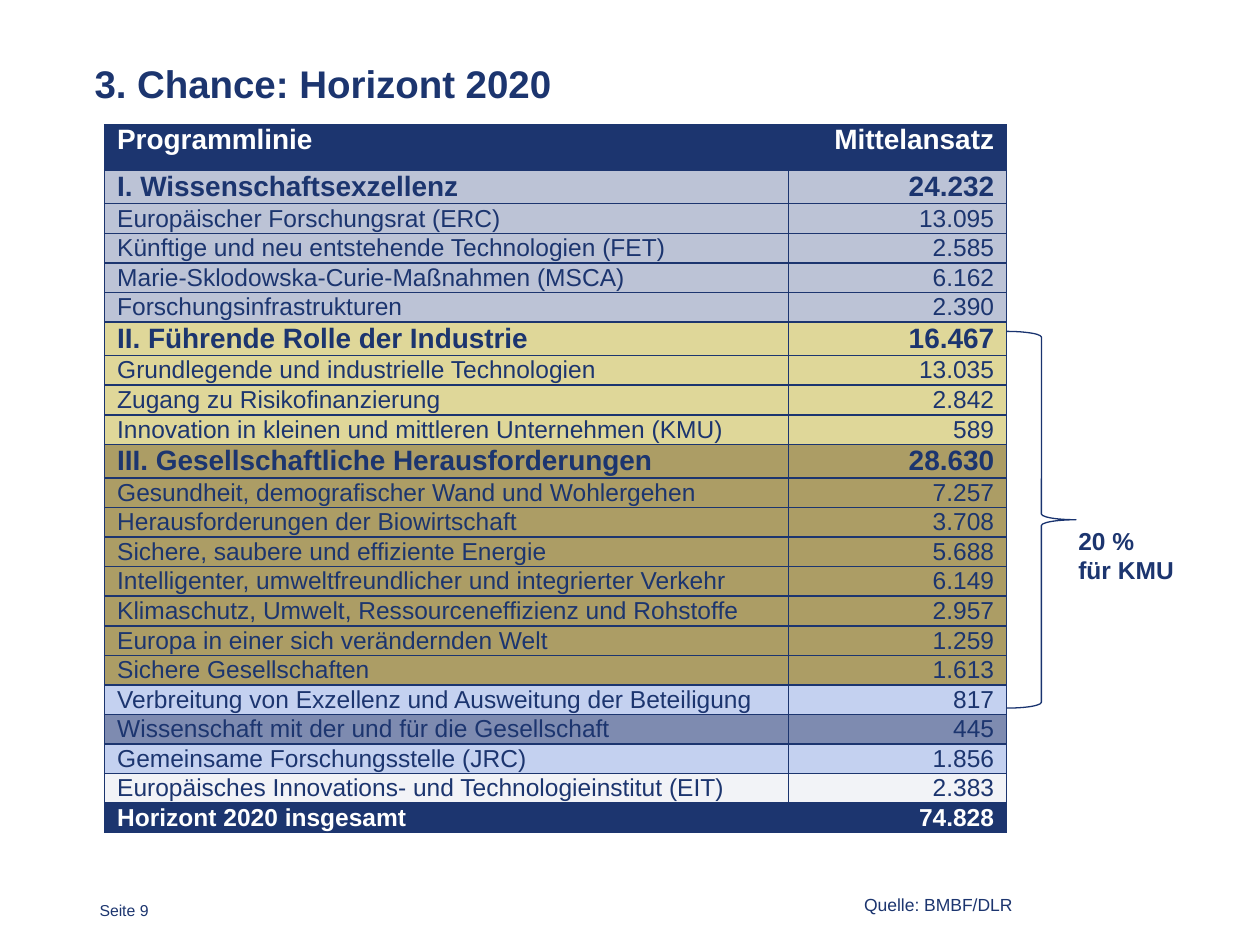
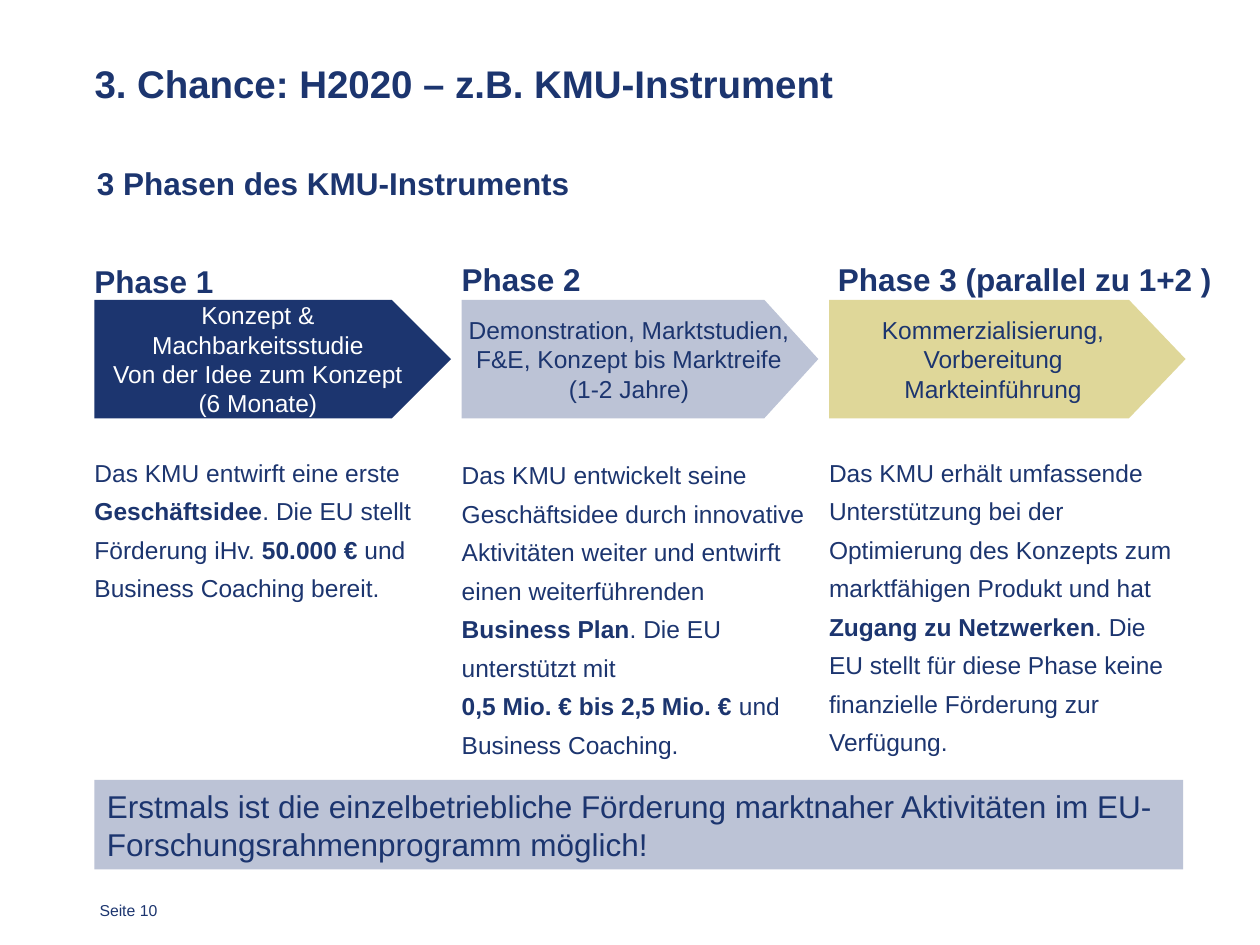
from lxml import etree
from pptx import Presentation, util as u
from pptx.dml.color import RGBColor
from pptx.enum import shapes, text
from pptx.oxml.ns import qn

FONT = "Arial"
C = {"navy": "1C356F", "brace": "19336F", "mist": "BCC3D6", "sand": "DFD799",
     "olive": "AC9D65", "sky": "C4D1F0", "slate": "7E8BB0", "pale": "F2F3F7",
     "white": "FFFFFF"}
TOP, MIDDLE, BOTTOM = (text.MSO_ANCHOR.TOP, text.MSO_ANCHOR.MIDDLE,
                       text.MSO_ANCHOR.BOTTOM)
CENTER, RIGHT = text.PP_ALIGN.CENTER, text.PP_ALIGN.RIGHT
DEFAULT_INSETS = (0.1, 0.05, 0.1, 0.05)
NO_INSETS = (0, 0, 0, 0)

PROGRAMMES = [
    ("mist", [("I. Wissenschaftsexzellenz", "24.232"),
              ("Europäischer Forschungsrat (ERC)", "13.095"),
              ("Künftige und neu entstehende Technologien (FET)", "2.585"),
              ("Marie-Sklodowska-Curie-Maßnahmen (MSCA)", "6.162"),
              ("Forschungsinfrastrukturen", "2.390")]),
    ("sand", [("II. Führende Rolle der Industrie", "16.467"),
              ("Grundlegende und industrielle Technologien", "13.035"),
              ("Zugang zu Risikofinanzierung", "2.842"),
              ("Innovation in kleinen und mittleren Unternehmen (KMU)", "589")]),
    ("olive", [("III. Gesellschaftliche Herausforderungen", "28.630"),
               ("Gesundheit, demografischer Wand und Wohlergehen", "7.257"),
               ("Herausforderungen der Biowirtschaft", "3.708"),
               ("Sichere, saubere und effiziente Energie", "5.688"),
               ("Intelligenter, umweltfreundlicher und integrierter Verkehr", "6.149"),
               ("Klimaschutz, Umwelt, Ressourceneffizienz und Rohstoffe", "2.957"),
               ("Europa in einer sich verändernden Welt", "1.259"),
               ("Sichere Gesellschaften", "1.613")]),
]
OTHER_LINES = [
    ("sky", "Verbreitung von Exzellenz und Ausweitung der Beteiligung", "817"),
    ("slate", "Wissenschaft mit der und für die Gesellschaft", "445"),
    ("sky", "Gemeinsame Forschungsstelle (JRC)", "1.856"),
    ("pale", "Europäisches Innovations- und Technologieinstitut (EIT)", "2.383"),
]

PHASES = [
    dict(label="Phase 1", label_box=(0, 0.02, 1.57, 0.31),
         fill="navy", color="white", point=0.5, insets=(0.08, 0.04, 0.08, 0.04),
         goal=["Konzept & Machbarkeitsstudie",
               "Von der Idee zum Konzept (6 Monate)"],
         body_top=1.51,
         body=[("Das KMU entwirft eine erste ", False), ("Geschäftsidee", True),
               (". Die EU stellt Förderung iHv. ", False), ("50.000 €", True),
               (" und Business Coaching bereit.", False)]),
    dict(label="Phase 2", label_box=(0, 0, 1.57, 0.31),
         fill="mist", color="navy", point=0.456, insets=(0.04, 0.04, 0, 0.04),
         goal=["Demonstration, Marktstudien, F&E, Konzept bis Marktreife",
               "(1-2 Jahre)"],
         body_top=1.53,
         body=[("Das KMU entwickelt seine Geschäftsidee durch innovative Aktivitäten "
                "weiter und entwirft einen weiterführenden ", False),
               ("Business Plan", True), (". Die EU unterstützt mit ", False), "break",
               ("0,5 Mio. € bis 2,5 Mio. € ", True),
               ("und Business Coaching.", False)]),
    dict(label="Phase 3 (parallel zu 1+2 )", label_box=(0.07, 0, 2.99, 0.31),
         fill="sand", color="navy", point=0.478, insets=(0.08, 0.04, 0.08, 0.04),
         goal=["Kommerzialisierung,", "Vorbereitung Markteinführung"],
         body_top=1.51,
         body=[("Das KMU erhält umfassende Unterstützung bei der Optimierung des "
                "Konzepts zum marktfähigen Produkt und hat ", False),
               ("Zugang zu Netzwerken", True),
               (". Die EU stellt für diese Phase keine finanzielle Förderung "
                "zur Verfügung.", False)]),
]


def rgb(name):
    return RGBColor.from_string(C[name])


def inches(box):
    return [u.Inches(v) for v in box]


def write(tf, paragraphs, size, color="navy", bold=False, align=None,
          spacing=None, anchor=TOP, insets=DEFAULT_INSETS):
    tf.word_wrap = True
    tf.vertical_anchor = anchor
    (tf.margin_left, tf.margin_top,
     tf.margin_right, tf.margin_bottom) = inches(insets)
    for i, parts in enumerate(paragraphs):
        p = tf.add_paragraph() if i else tf.paragraphs[0]
        p.alignment = align
        p.line_spacing = spacing
        f = p.font
        f.name, f.size, f.bold = FONT, u.Pt(size), bold
        f.color.rgb = rgb(color)
        for part in [(parts, None)] if isinstance(parts, str) else parts:
            if part == "break":
                p.add_line_break()
                continue
            r = p.add_run()
            r.text, r.font.bold = part


def add_text(s, box, paragraphs, size, **style):
    tb = s.shapes.add_textbox(*inches(box))
    write(tb.text_frame, paragraphs, size, **style)


def add_filled(s, kind, box, fill):
    sp = s.shapes.add_shape(kind, *inches(box))
    sp.shadow.inherit = False
    sp.fill.solid()
    sp.fill.fore_color.rgb = rgb(fill)
    sp.line.fill.background()
    return sp


def add_base(prs, title, page):
    s = prs.slides.add_slide(prs.slide_layouts[6])
    add_text(s, (0.79, 7.15, 1.3, 0.15), [f"Seite {page}"], 9, insets=NO_INSETS)
    add_text(s, (0.75, 0.4, 6.41, 0.47), [title], 22, bold=True, spacing=1.13,
             anchor=MIDDLE, insets=NO_INSETS)
    return s


def border_cell(cell):
    tcPr = cell._tc.get_or_add_tcPr()
    for side in ("lnL", "lnR", "lnT", "lnB"):
        ln = etree.SubElement(tcPr, qn(f"a:{side}"), w=str(u.Pt(1)))
        fill = etree.SubElement(ln, qn("a:solidFill"))
        etree.SubElement(fill, qn("a:srgbClr"), val=C["navy"])


def budget_rows():
    rows = [("Programmlinie", "Mittelansatz", "navy", "white", 16, True)]
    for fill, lines in PROGRAMMES:
        for i, (name, amount) in enumerate(lines):
            rows.append((name, amount, fill, "navy", 14 if i else 16, i == 0))
    rows += [(name, amount, fill, "navy", 14, False)
             for fill, name, amount in OTHER_LINES]
    rows.append(("Horizont 2020 insgesamt", "74.828", "navy", "white", 14, True))
    return rows


def add_budget_table(s, box):
    rows = budget_rows()
    header_h, section_h = 0.36, 0.26
    sections = len(PROGRAMMES)
    line_h = (box[3] - header_h - sections * section_h) / (len(rows) - 1 - sections)
    tbl = s.shapes.add_table(len(rows), 2, *inches(box)).table
    tbl.first_row = tbl.horz_banding = False
    amount_w = 1.73
    tbl.columns[0].width = u.Inches(box[2] - amount_w)
    tbl.columns[1].width = u.Inches(amount_w)
    for i, (name, amount, fill, color, size, bold) in enumerate(rows):
        height = header_h if i == 0 else section_h if size == 16 else line_h
        tbl.rows[i].height = u.Inches(height)
        for cell, value, align in zip(tbl.rows[i].cells, (name, amount), (None, RIGHT)):
            border_cell(cell)
            cell.fill.solid()
            cell.fill.fore_color.rgb = rgb(fill)
            cell.vertical_anchor = MIDDLE if i else TOP
            cell.margin_left = cell.margin_right = u.Inches(0.1)
            cell.margin_top = cell.margin_bottom = 0
            p = cell.text_frame.paragraphs[0]
            p.text, p.alignment = value, align
            f = p.font
            f.name, f.size, f.bold = FONT, u.Pt(size), bold
            f.color.rgb = rgb(color)


def add_sme_share(s, box):
    x, y, w, h = box
    brace = s.shapes.add_shape(shapes.MSO_SHAPE.RIGHT_BRACE, *inches((x, y, 0.55, h)))
    brace.shadow.inherit = False
    brace.fill.background()
    brace.line.color.rgb = rgb("brace")
    brace.line.width = u.Pt(0.75)
    label_x = 0.47
    add_text(s, (x + label_x, y + h / 2, w - label_x, 0.57),
             ["20 %", "für KMU"], 14, bold=True)


def budget_slide(prs):
    s = add_base(prs, "3. Chance: Horizont 2020", 9)
    add_budget_table(s, (0.83, 0.99, 7.16, 5.6))
    add_sme_share(s, (7.99, 2.63, 1.75, 2.99))
    add_text(s, (6.76, 7.05, 1.69, 0.27), ["Quelle: BMBF/DLR"], 10)


def add_phase(s, box, phase):
    x, y, w, h = box
    dx, dy, label_w, label_h = phase["label_box"]
    add_text(s, (x + dx, y + dy, label_w, label_h), [phase["label"]], 18, bold=True,
             spacing=u.Pt(22), anchor=BOTTOM, insets=NO_INSETS)
    arrow = add_filled(s, shapes.MSO_SHAPE.PENTAGON, (x, y + 0.33, w, 0.94),
                       phase["fill"])
    arrow.adjustments[0] = phase["point"]
    write(arrow.text_frame, phase["goal"], 14, color=phase["color"], align=CENTER,
          anchor=MIDDLE, insets=phase["insets"])
    top = phase["body_top"]
    add_text(s, (x, y + top, w, h - top), [phase["body"]], 14,
             spacing=u.Pt(22), insets=NO_INSETS)


def phases_slide(prs):
    s = add_base(prs, "3. Chance: H2020 – z.B. KMU-Instrument", 10)
    add_text(s, (0.77, 1.3, 8.66, 0.76), ["3 Phasen des KMU-Instruments"], 18,
             bold=True, spacing=u.Pt(22), insets=NO_INSETS)
    left, total_w, phase_w = 0.75, 8.66, 2.83
    pitch = (total_w - phase_w) / (len(PHASES) - 1)
    for i, phase in enumerate(PHASES):
        add_phase(s, (left + i * pitch, 2.05, phase_w, 3.98), phase)
    banner = add_filled(s, shapes.MSO_SHAPE.RECTANGLE, (left, 6.19, 8.64, 0.71), "mist")
    write(banner.text_frame,
          ["Erstmals ist die einzelbetriebliche Förderung marktnaher Aktivitäten "
           "im EU-Forschungsrahmenprogramm möglich!"], 18,
          align=text.PP_ALIGN.LEFT, anchor=MIDDLE)


def main():
    prs = Presentation()
    prs.slide_width, prs.slide_height = u.Inches(10), u.Inches(7.5)
    budget_slide(prs)
    phases_slide(prs)
    prs.save("out.pptx")


if __name__ == "__main__":
    main()
